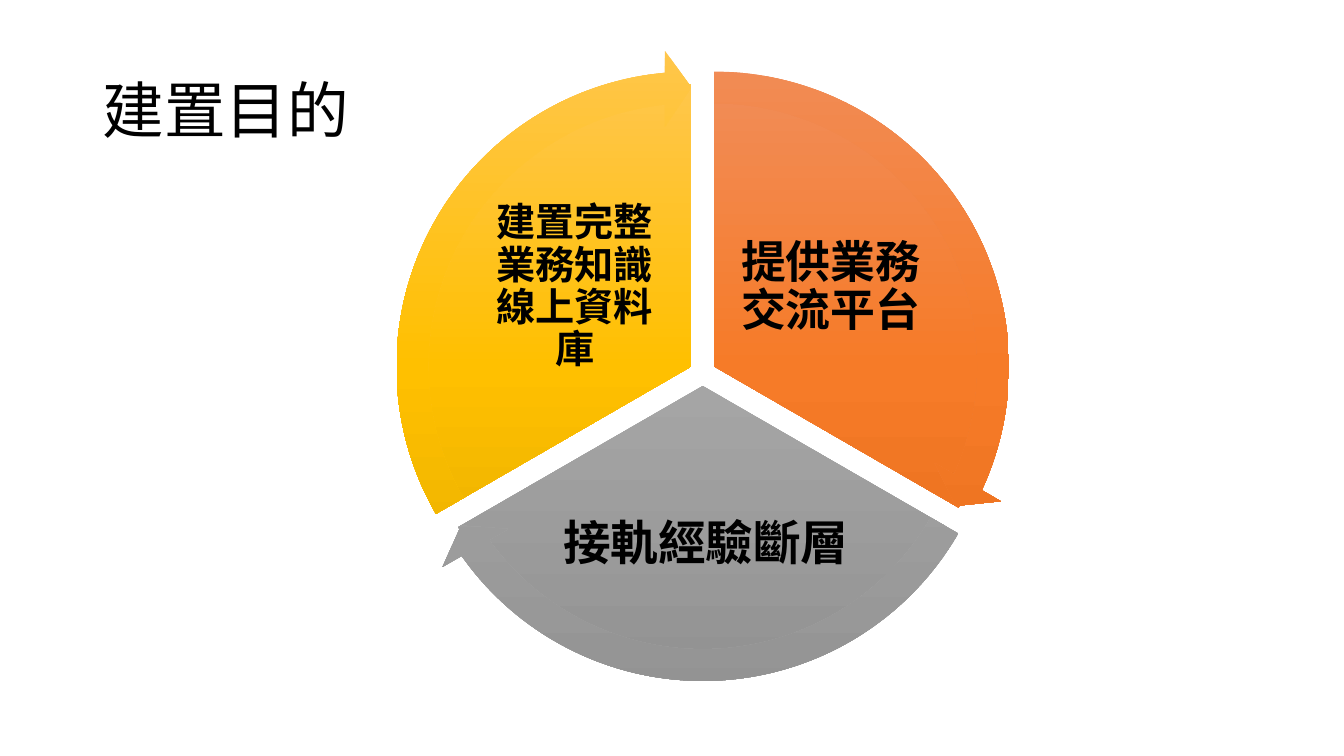
from copy import deepcopy
from dataclasses import dataclass
from math import cos, radians, sin

from pptx import Presentation
from pptx.dml.color import RGBColor
from pptx.enum.shapes import MSO_SHAPE as Preset
from pptx.enum.text import MSO_ANCHOR as Anchor, PP_ALIGN as Align
from pptx.oxml.ns import qn
from pptx.slide import Slide
from pptx.util import Inches, Pt


@dataclass(frozen=True)
class Theme:
    font: str = "Arial"
    text: str = "000000"
    background: str = "FFFFFF"
    title_size: int = 44
    orange: tuple[str, ...] = ("F18C57", "F67B28", "E56C19")
    gray: tuple[str, ...] = ("AFAFAF", "A5A5A5", "939393")
    yellow: tuple[str, ...] = ("FFC64B", "FFC000", "E3AB00")


@dataclass(frozen=True)
class Area:
    left: float
    top: float
    width: float
    height: float

    def lengths(self) -> tuple[Inches, ...]:
        return tuple(Inches(v) for v in (self.left, self.top, self.width, self.height))


@dataclass(frozen=True)
class Sector:
    label: str
    size: int
    colors: tuple[str, ...]
    label_area: Area
    inset: float


THEME = Theme()
TITLE_AREA = Area(0.92, 0.4, 11.5, 1.45)
SECTORS = (
    Sector("提供業務交流平台", 32, THEME.orange, Area(7.24, 2.02, 2, 1.67), 0.04),
    Sector("接軌經驗斷層", 34, THEME.gray, Area(5.5, 4.67, 3, 1.47), 0.05),
    Sector("建置完整業務知識線上資料庫", 28, THEME.yellow, Area(4.7, 2.02, 2, 1.67), 0.04),
)
CENTER_X, CENTER_Y = 6.97, 3.7
PIE_SIZE, ARROW_SIZE = 5.6, 6.29
GAP = 0.13  # distance of each sector from the wheel's centre

# Adjustment values count angles in units of 5/3 degree.
FULL_TURN = 216
STEP = FULL_TURN / len(SECTORS)
FIRST_START = 162
ARROW_END = 14.72


def start_angle(index: int) -> float:
    return (FIRST_START + index * STEP) % FULL_TURN


def sector_area(index: int, size: float) -> Area:
    """Square of the given size, moved outward along the sector's middle."""
    middle = radians((start_angle(index) + STEP / 2) * 360 / FULL_TURN)
    return Area(
        CENTER_X + GAP * cos(middle) - size / 2,
        CENTER_Y + GAP * sin(middle) - size / 2,
        size,
        size,
    )


def add_gradient_shape(
    page: Slide, preset: Preset, area: Area, angles: tuple[float, ...], colors: tuple[str, ...]
) -> None:
    shape = page.shapes.add_shape(preset, *area.lengths())
    for number, value in enumerate(angles):
        shape.adjustments[number] = value
    shape.shadow.inherit = False
    shape.line.fill.background()
    shape.fill.gradient()
    shape.fill.gradient_angle = 270
    stop_list = next(shape._element.iter(qn("a:gsLst")))
    stop_list.insert(1, deepcopy(stop_list[0]))
    for number, (stop, color) in enumerate(zip(shape.fill.gradient_stops, colors)):
        stop.position = number / (len(colors) - 1)
        stop.color.rgb = RGBColor.from_string(color)


def add_text(
    page: Slide,
    area: Area,
    text: str,
    size: int,
    align: Align = Align.LEFT,
    bold: bool = False,
    insets: tuple[float, float] = (0.1, 0.05),
) -> None:
    box = page.shapes.add_textbox(*area.lengths())
    frame = box.text_frame
    frame.word_wrap = True
    frame.vertical_anchor = Anchor.MIDDLE
    frame.margin_left = frame.margin_right = Inches(insets[0])
    frame.margin_top = frame.margin_bottom = Inches(insets[1])
    para = frame.paragraphs[0]
    para.alignment = align
    para.line_spacing = 0.9
    span = para.add_run()
    span.text = text
    span.font.name = THEME.font
    span.font.size = Pt(size)
    span.font.bold = bold
    span.font.color.rgb = RGBColor.from_string(THEME.text)


def add_wheel(page: Slide) -> None:
    for index, sector in enumerate(SECTORS):
        angles = (start_angle(index), start_angle(index + 1))
        add_gradient_shape(page, Preset.PIE, sector_area(index, PIE_SIZE), angles, sector.colors)
        add_text(
            page, sector.label_area, sector.label, sector.size,
            Align.CENTER, True, (sector.inset, sector.inset),
        )
    for index, sector in enumerate(SECTORS):
        angles = (0.05, 3.28, ARROW_END + index * STEP, start_angle(index), 0.06)
        area = sector_area(index, ARROW_SIZE)
        add_gradient_shape(page, Preset.CIRCULAR_ARROW, area, angles, sector.colors)


def main() -> None:
    deck = Presentation()
    deck.slide_width, deck.slide_height = Inches(13.33), Inches(7.5)
    page = deck.slides.add_slide(deck.slide_layouts[6])
    page.background.fill.solid()
    page.background.fill.fore_color.rgb = RGBColor.from_string(THEME.background)
    add_text(page, TITLE_AREA, "建置目的", THEME.title_size)
    add_wheel(page)
    deck.save("out.pptx")


if __name__ == "__main__":
    main()
